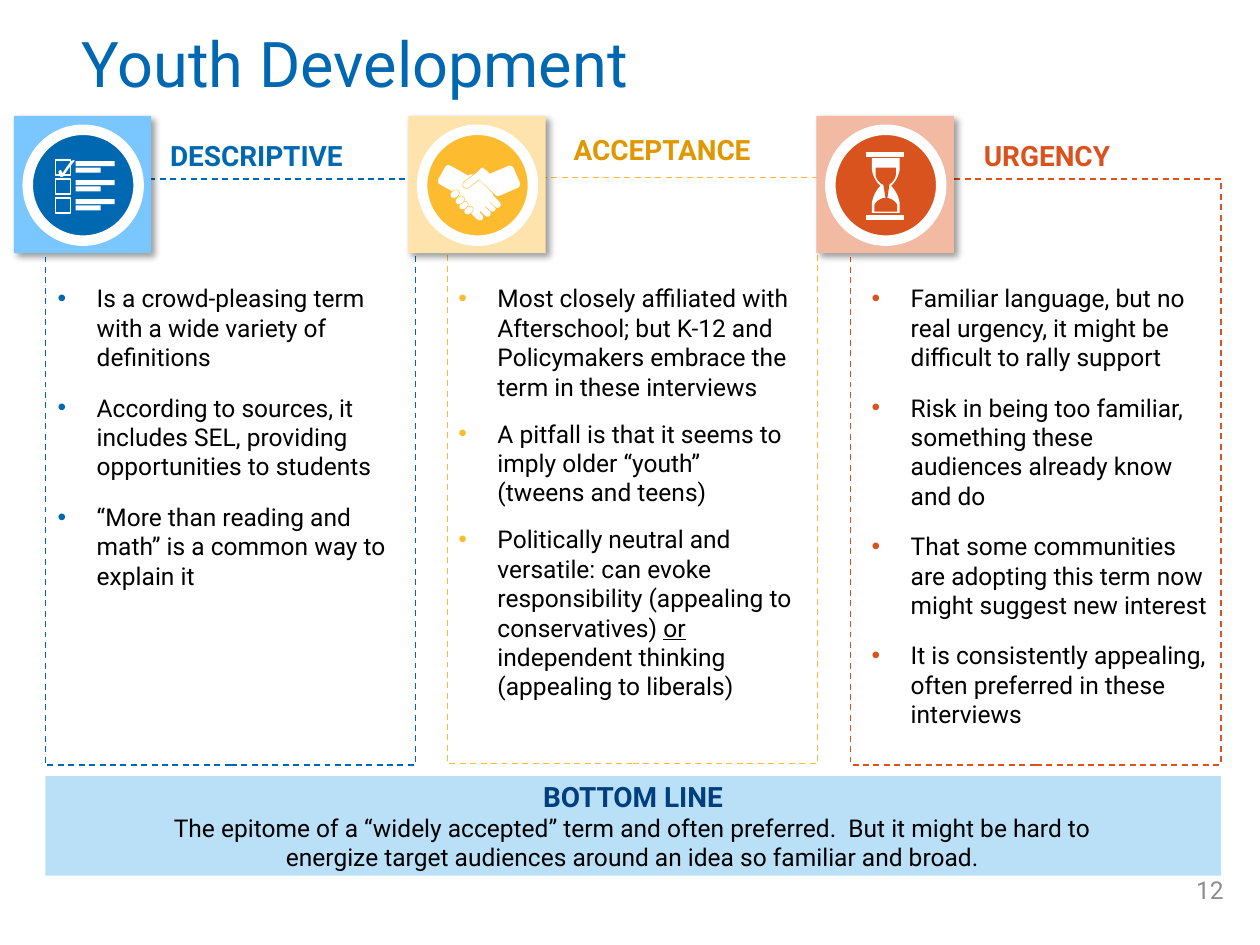
from copy import deepcopy

from lxml import etree
from pptx import Presentation
from pptx.dml.color import RGBColor
from pptx.enum.dml import MSO_LINE
from pptx.enum.shapes import MSO_SHAPE
from pptx.enum.text import MSO_ANCHOR, MSO_AUTO_SIZE, PP_ALIGN
from pptx.oxml.ns import qn
from pptx.util import Inches, Pt

BLUE = RGBColor(0x00, 0x67, 0xB1)
LIGHT_BLUE = RGBColor(0x7A, 0xC7, 0xFF)
PALE_BLUE = RGBColor(0xB9, 0xE0, 0xF7)
NAVY = RGBColor(0x00, 0x3E, 0x7E)
YELLOW = RGBColor(0xFD, 0xBB, 0x30)
LIGHT_YELLOW = RGBColor(0xFE, 0xE4, 0xAC)
GOLD = RGBColor(0xE0, 0x98, 0x02)
ORANGE = RGBColor(0xD9, 0x53, 0x1E)
LIGHT_ORANGE = RGBColor(0xF2, 0xB9, 0xA3)
GREY = RGBColor(0x8C, 0x8C, 0x8C)
WHITE = RGBColor(0xFF, 0xFF, 0xFF)
BLACK = RGBColor(0x00, 0x00, 0x00)


def draw(shapes, kind, at, fill=None, line=None, width=0.85, rotation=0):
    shape = shapes.add_shape(kind, *[Inches(value) for value in at])
    shape.shadow.inherit = False
    shape.rotation = rotation
    if fill is None:
        shape.fill.background()
    else:
        shape.fill.solid()
        shape.fill.fore_color.rgb = fill
    if line is None:
        shape.line.fill.background()
    else:
        shape.line.color.rgb = line
        shape.line.width = Pt(width)
    return shape


def write(box, texts, size, color, bold=False, align=PP_ALIGN.LEFT, bullet=None, gap=0):
    """Fill a box with paragraphs; _marks_ underline and a newline breaks the line."""
    frame = box.text_frame
    frame.word_wrap = True
    frame.auto_size = MSO_AUTO_SIZE.NONE
    for number, text in enumerate(texts):
        para = frame.add_paragraph() if number else frame.paragraphs[0]
        para.alignment = align
        if number:
            para.space_before = Pt(gap)
        if bullet is not None:
            properties = para._p.get_or_add_pPr()
            properties.set("marL", str(Inches(0.31)))
            properties.set("indent", str(-Inches(0.31)))
            tint = etree.SubElement(properties, qn("a:buClr"))
            etree.SubElement(tint, qn("a:srgbClr"), val=str(bullet))
            etree.SubElement(properties, qn("a:buFont"), typeface="Arial")
            etree.SubElement(properties, qn("a:buChar"), char="•")
        for part, words in enumerate(text.split("_")):
            for row, piece in enumerate(words.split("\n")):
                if row:
                    para.add_line_break()
                span = para.add_run()
                span.text = piece
                font = {"name": "Roboto", "size": Pt(size), "bold": bold,
                        "underline": part % 2 == 1}
                for name, value in font.items():
                    setattr(span.font, name, value)
                span.font.color.rgb = color
        for line_break in para._p.findall(qn("a:br")):
            line_break.append(deepcopy(para.runs[0]._r.rPr))


deck = Presentation()
deck.slide_width, deck.slide_height = Inches(10), Inches(7.5)
page = deck.slides.add_slide(deck.slide_layouts[5])

title = page.shapes.title
title.left, title.top, title.width, title.height = [Inches(v) for v in (0.55, 0, 7.84, 1.06)]
write(title, ["Youth Development"], 36, BLUE)
title.text_frame.vertical_anchor = MSO_ANCHOR.MIDDLE
title.text_frame.paragraphs[0].line_spacing = 0.9

# Dashed panels
for left, top, color in ((0.36, 1.42, BLUE), (3.55, 1.41, YELLOW), (6.75, 1.42, ORANGE)):
    panel = draw(page.shapes, MSO_SHAPE.RECTANGLE, (left, top, 2.94, 4.65), WHITE, color)
    panel.line.dash_style = MSO_LINE.DASH

# Icon tiles: shadowed square with a ringed disc
icons = []
for left, light, color in ((0.11, LIGHT_BLUE, BLUE), (3.24, LIGHT_YELLOW, YELLOW),
                           (6.48, LIGHT_ORANGE, ORANGE)):
    icon = page.shapes.add_group_shape().shapes
    tile = draw(icon, MSO_SHAPE.RECTANGLE, (left, 0.92, 1.09, 1.09), light)
    effects = tile._element.spPr.find(qn("a:effectLst"))
    shadow = etree.SubElement(effects, qn("a:outerShdw"), blurRad=str(Pt(4)), dist=str(Pt(3)),
                              dir="2700000", algn="tl", rotWithShape="0")
    shade = etree.SubElement(shadow, qn("a:srgbClr"), val="000000")
    etree.SubElement(shade, qn("a:alpha"), val="40000")
    draw(icon, MSO_SHAPE.OVAL, (left + 0.11, 1.03, 0.88, 0.88), color, WHITE, 6)
    icons.append(icon)
checklist, handshake, hourglass = icons

# Checklist
for row in range(3):
    top = 1.27 + 0.15 * row
    draw(checklist, MSO_SHAPE.RECTANGLE, (0.44, top, 0.12, 0.12), line=WHITE)
    draw(checklist, MSO_SHAPE.RECTANGLE, (0.6, top + 0.01, 0.31, 0.04), WHITE)
    draw(checklist, MSO_SHAPE.RECTANGLE, (0.6, top + 0.06, 0.2, 0.04), WHITE)
check = checklist.add_textbox(Inches(0.33), Inches(1.13), Inches(0.27), Inches(0.29))
write(check, ["✓"], 18, WHITE)

# Handshake: cuff, fingers, palm, knuckles, thumb, other hand
draw(handshake, MSO_SHAPE.ROUNDED_RECTANGLE, (3.49, 1.35, 0.25, 0.17), WHITE, rotation=29.1)
for left, top in ((3.65, 1.64), (3.71, 1.61), (3.75, 1.57), (3.79, 1.54)):
    draw(handshake, MSO_SHAPE.FLOWCHART_TERMINATOR, (left, top, 0.21, 0.06),
         WHITE, YELLOW, 0.25, 45.3)
draw(handshake, MSO_SHAPE.ROUNDED_RECTANGLE, (3.62, 1.43, 0.27, 0.23), WHITE, rotation=45.1)
for left, top in ((3.68, 1.64), (3.64, 1.6), (3.61, 1.56), (3.57, 1.51)):
    draw(handshake, MSO_SHAPE.OVAL, (left, top, 0.08, 0.06), WHITE, YELLOW, 0.25, 324.7)
draw(handshake, MSO_SHAPE.FLOWCHART_TERMINATOR, (3.66, 1.4, 0.18, 0.06),
     WHITE, YELLOW, 0.25, 322.8)
draw(handshake, MSO_SHAPE.ROUNDED_RECTANGLE, (3.84, 1.32, 0.09, 0.24), WHITE, rotation=313.8)
draw(handshake, MSO_SHAPE.ROUNDED_RECTANGLE, (3.89, 1.34, 0.22, 0.19), WHITE, rotation=336.8)

# Hourglass: each bulb is a dome with a Bézier curve from shoulder to apex
curve = []
for step in range(13):
    t = step / 12
    u = 1 - t
    curve.append((u**3 + 3 * u * u * t + 1.65 * u * t * t,
                  0.93 * u * u * t + 3 * u * t * t + t**3))
arch = [(-across, rise) for across, rise in curve] + curve[-2::-1]
for half, base, shoulder, apex, color in (
        (0.11, 1.72, 1.62, 1.46, WHITE), (0.11, 1.24, 1.34, 1.49, WHITE),
        (0.08, 1.33, 1.39, 1.47, ORANGE), (0.09, 1.68, 1.63, 1.57, ORANGE)):
    points = [(Inches(7.03 + half * across), Inches(shoulder + (apex - shoulder) * rise))
              for across, rise in arch]
    outline = hourglass.build_freeform(Inches(7.03 - half), Inches(base))
    outline.add_line_segments(points + [(Inches(7.03 + half), Inches(base))], close=True)
    bulb = outline.convert_to_shape()
    bulb.shadow.inherit = False
    bulb.fill.solid()
    bulb.fill.fore_color.rgb = color
    bulb.line.fill.background()
for top in (1.2, 1.7):
    draw(hourglass, MSO_SHAPE.RECTANGLE, (6.87, top, 0.31, 0.05), WHITE, ORANGE)
draw(hourglass, MSO_SHAPE.ISOSCELES_TRIANGLE, (7.01, 1.46, 0.05, 0.16), ORANGE, rotation=180)

draw(page.shapes, MSO_SHAPE.RECTANGLE, (0.36, 6.16, 9.33, 0.79), PALE_BLUE)

# Headings and bottom line
for at, text, size, color, bold in (
        ((1.16, 1.05, 1.75, 0.37), "DESCRIPTIVE", 16, BLUE, True),
        ((4.32, 1, 1.87, 0.37), "ACCEPTANCE", 16, GOLD, True),
        ((7.66, 1.05, 1.3, 0.37), "URGENCY", 16, ORANGE, True),
        ((4.16, 6.14, 1.73, 0.37), "BOTTOM LINE", 16, NAVY, True),
        ((1.18, 6.4, 7.68, 0.57),
         "The epitome of a “widely accepted” term and often preferred.  But it might be hard to "
         "energize target audiences around an idea so familiar and broad.", 14, BLACK, False)):
    box = page.shapes.add_textbox(*[Inches(value) for value in at])
    write(box, [text], size, color, bold, PP_ALIGN.CENTER)

# Bulleted lists
for left, width, height, color, gap, points in (
        (0.36, 2.97, 2.56, BLUE, 12, [
            "Is a crowd-pleasing term with a wide variety of definitions",
            "According to sources, it includes SEL, providing opportunities to students",
            "“More than reading and math” is a common way to explain it"]),
        (3.54, 2.93, 3.44, YELLOW, 10, [
            "Most closely affiliated with Afterschool; but K-12 and Policymakers embrace "
            "the term in these interviews",
            "A pitfall is that it seems to imply older “youth” \n(tweens and teens)",
            "Politically neutral and versatile: can evoke responsibility (appealing to "
            "conservatives) _or_ independent thinking (appealing to liberals)"]),
        (6.82, 2.87, 3.43, ORANGE, 12, [
            "Familiar language, but no real urgency, it might be difficult to rally support",
            "Risk in being too familiar, something these audiences already know and do",
            "That some communities are adopting this term now might suggest new interest",
            "It is consistently appealing, often preferred in these interviews"])):
    box = page.shapes.add_textbox(Inches(left), Inches(2.2), Inches(width), Inches(height))
    write(box, points, 14, BLACK, bullet=color, gap=gap)

number_box = page.shapes.add_textbox(Inches(9.07), Inches(6.86), Inches(0.74), Inches(0.4))
write(number_box, ["12"], 14, GREY, align=PP_ALIGN.RIGHT)
number_box.text_frame.vertical_anchor = MSO_ANCHOR.MIDDLE

deck.save("out.pptx")
